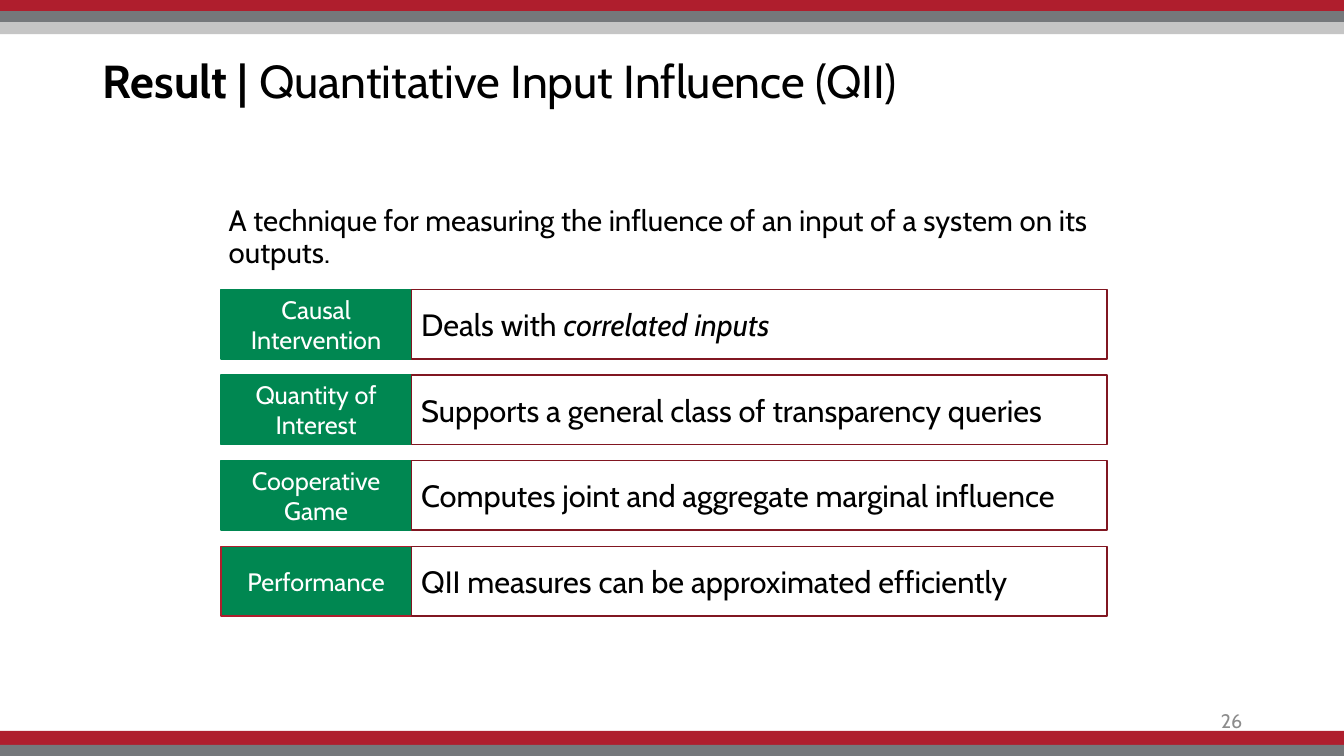
from pptx import Presentation
from pptx.dml.color import RGBColor
from pptx.enum.shapes import MSO_SHAPE
from pptx.enum.text import MSO_ANCHOR, MSO_AUTO_SIZE, PP_ALIGN
from pptx.util import Inches, Pt

RECTANGLE = MSO_SHAPE.RECTANGLE
TOP, MIDDLE = MSO_ANCHOR.TOP, MSO_ANCHOR.MIDDLE
LEFT, CENTER, RIGHT = PP_ALIGN.LEFT, PP_ALIGN.CENTER, PP_ALIGN.RIGHT
NO_AUTOFIT = MSO_AUTO_SIZE.NONE
TITLE_ONLY = 5
FONT = "Cabin"
RED, GRAY, SILVER = "AF1E2D", "75787B", "C5C5C5"
GREEN, MAROON = "008751", "811621"
BLACK, WHITE, PAGE_GRAY = "000000", "FFFFFF", "8C8C8C"
WIDTH, HEIGHT = 13.33, 7.5

BANDS = [(0, 0.11, RED), (0.11, 0.11, GRAY), (0.22, 0.12, SILVER),
         (7.25, 0.15, RED), (7.39, 0.11, GRAY)]
ROWS = [
    ("Causal Intervention", GREEN,
     [("Deals with ", {}), ("correlated inputs", {"italic": True})]),
    ("Quantity of Interest", GREEN,
     [("Supports a general class of transparency queries", {})]),
    ("Cooperative Game", GREEN,
     [("Computes joint and aggregate marginal influence", {})]),
    ("Performance", RED,
     [("QII measures can be approximated efficiently", {})]),
]
ROW_TOP, ROW_PITCH, ROW_HEIGHT = 2.87, 0.85, 0.69
LABEL_LEFT, LABEL_WIDTH, DETAIL_WIDTH = 2.19, 1.89, 6.9


def color(value):
    """Return the colour for a hex string."""
    return RGBColor.from_string(value)


def write_text(shape, runs, size, text_color, align=LEFT, anchor=MIDDLE, **spacing):
    """Fill a shape with one paragraph of formatted runs."""
    frame = shape.text_frame
    frame.word_wrap = True
    frame.auto_size = NO_AUTOFIT
    frame.vertical_anchor = anchor
    paragraph = frame.paragraphs[0]
    for name, value in {"alignment": align, **spacing}.items():
        setattr(paragraph, name, value)
    for text, style in runs:
        run = paragraph.add_run()
        run.text = text
        run.font.color.rgb = color(text_color)
        for name, value in {"name": FONT, "size": Pt(size), **style}.items():
            setattr(run.font, name, value)


def add_box(slide, left, top, width, height, fill, line=None):
    """Add a flat rectangle with an optional outline."""
    shape = slide.shapes.add_shape(
        RECTANGLE, Inches(left), Inches(top), Inches(width), Inches(height))
    shape.shadow.inherit = False
    shape.fill.solid()
    shape.fill.fore_color.rgb = color(fill)
    if line:
        shape.line.color.rgb = color(line)
        shape.line.width = Pt(1)
    else:
        shape.line.fill.background()
    return shape


def add_text(slide, left, top, width, height, text, size, text_color, **layout):
    """Add a text box with one plain run."""
    box = slide.shapes.add_textbox(
        Inches(left), Inches(top), Inches(width), Inches(height))
    write_text(box, [(text, {})], size, text_color, **layout)


def set_title(slide):
    """Place and format the title placeholder."""
    title = slide.shapes.title
    position = {"left": 0.92, "top": 0.1, "width": 11.5, "height": 1.45}
    for name, value in position.items():
        setattr(title, name, Inches(value))
    runs = [("Result |", {"bold": True}),
            (" Quantitative Input Influence (QII)", {"bold": False})]
    write_text(title, runs, 33, BLACK, line_spacing=0.9)


def add_row(slide, index, label, label_line, detail):
    """Add a green label and the outlined detail beside it."""
    top = ROW_TOP + index * ROW_PITCH
    label_box = add_box(slide, LABEL_LEFT, top, LABEL_WIDTH, ROW_HEIGHT,
                        GREEN, label_line)
    write_text(label_box, [(label, {})], 18, WHITE, align=CENTER)
    detail_box = add_box(slide, LABEL_LEFT + LABEL_WIDTH, top, DETAIL_WIDTH,
                         ROW_HEIGHT, WHITE, MAROON)
    write_text(detail_box, detail, 22, BLACK)


def main():
    """Build the slide and save it."""
    presentation = Presentation()
    presentation.slide_width = Inches(WIDTH)
    presentation.slide_height = Inches(HEIGHT)
    slide = presentation.slides.add_slide(presentation.slide_layouts[TITLE_ONLY])
    for top, height, fill in BANDS:
        add_box(slide, 0, top, WIDTH, height, fill)
    set_title(slide)
    add_text(slide, 9.42, 6.95, 3, 0.4, "26", 14, PAGE_GRAY, align=RIGHT)
    add_text(slide, 2.17, 2, 8.81, 0.8,
             "A technique for measuring the influence of an input of a system"
             " on its outputs.", 21, BLACK, anchor=TOP,
             line_spacing=0.9, space_before=Pt(7.5))
    for index, (label, label_line, detail) in enumerate(ROWS):
        add_row(slide, index, label, label_line, detail)
    presentation.save("out.pptx")


if __name__ == "__main__":
    main()
